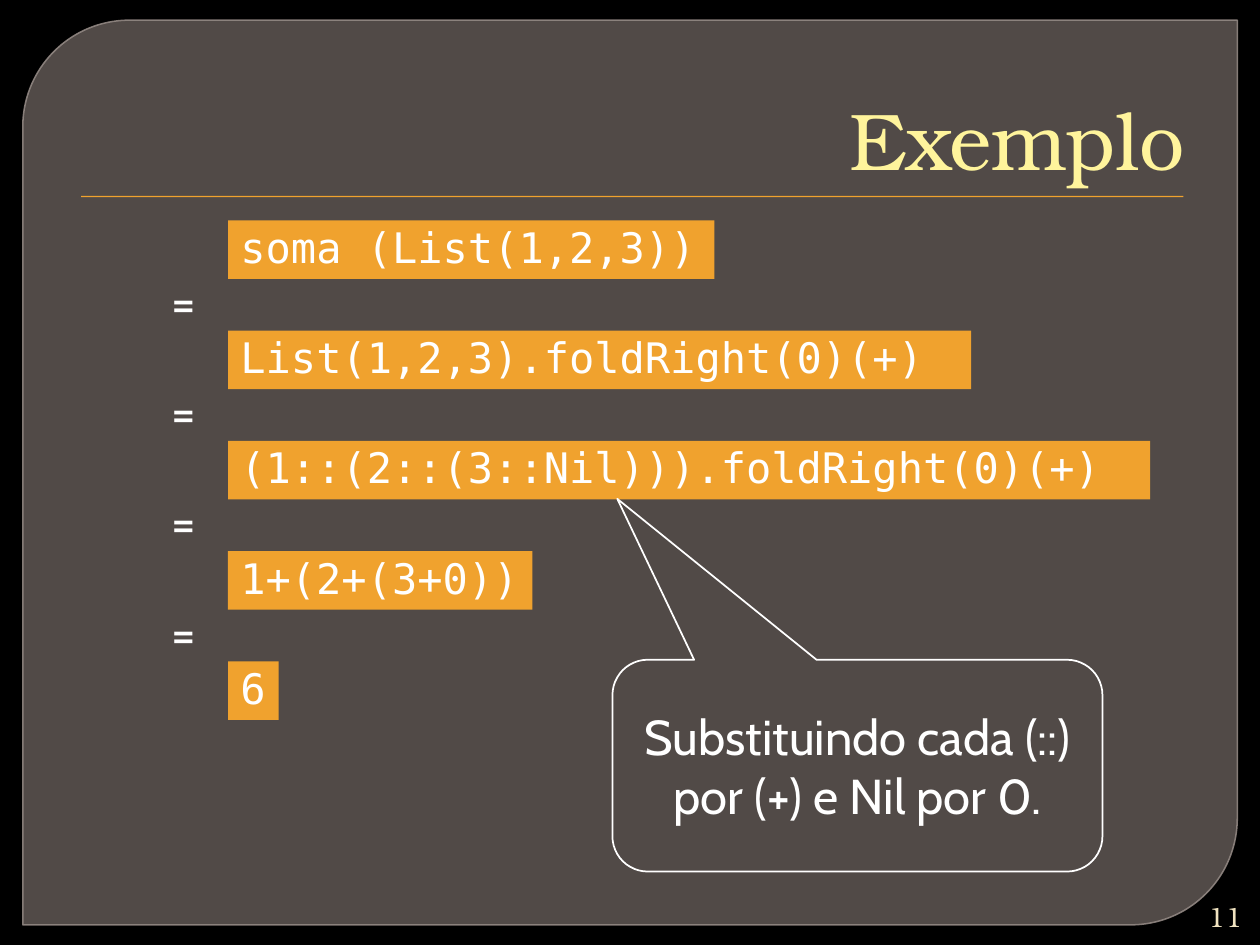
from dataclasses import dataclass

from lxml import etree
from pptx import Presentation
from pptx.dml.color import RGBColor
from pptx.enum.shapes import MSO_SHAPE
from pptx.enum.text import MSO_ANCHOR, MSO_AUTO_SIZE, PP_ALIGN
from pptx.oxml.ns import qn
from pptx.util import Pt

ROUND_PANEL = MSO_SHAPE.ROUND_2_DIAG_RECTANGLE
RECTANGLE = MSO_SHAPE.RECTANGLE
CALLOUT = MSO_SHAPE.ROUNDED_RECTANGULAR_CALLOUT
MIDDLE, BOTTOM = MSO_ANCHOR.MIDDLE, MSO_ANCHOR.BOTTOM
LEFT, CENTER, RIGHT = PP_ALIGN.LEFT, PP_ALIGN.CENTER, PP_ALIGN.RIGHT
NO_FIT = MSO_AUTO_SIZE.NONE


@dataclass
class Theme:
    background: str = "000000"
    panel: str = "7D726E"
    panel_line: str = "948A85"
    accent: str = "F0A22E"
    title: str = "FFF49C"
    number: str = "F0E3C0"
    text: str = "FFFFFF"
    serif: str = "TeX Gyre Bonum"
    sans: str = "Cabin"
    mono: str = "DejaVu Sans Mono"
    title_size: int = 46
    number_size: int = 16
    code_size: int = 24
    body_size: int = 28


theme = Theme()


def write(shape, text, font, size, color, align, anchor=MIDDLE, wrap=True):
    frame = shape.text_frame
    frame.text = text
    frame.word_wrap = wrap
    frame.auto_size = NO_FIT
    frame.vertical_anchor = anchor
    para = frame.paragraphs[0]
    para.alignment = align
    span = para.runs[0]
    span.font.name = font
    span.font.size = Pt(size)
    span.font.color.rgb = RGBColor.from_string(color)
    return para


def set_alpha(fill_parent, percent):
    color = fill_parent.find(qn("a:solidFill")).find(qn("a:srgbClr"))
    etree.SubElement(color, qn("a:alpha"), val=str(percent * 1000))


deck = Presentation()
deck.slide_width, deck.slide_height = Pt(720), Pt(540)
page = deck.slides.add_slide(deck.slide_layouts[5])
page.background.fill.solid()
page.background.fill.fore_color.rgb = RGBColor.from_string(theme.background)

panel = page.shapes.add_shape(ROUND_PANEL, Pt(13), Pt(11.5), Pt(694), Pt(517))
panel.adjustments[0] = 0.118
panel.adjustments[1] = 0
panel.shadow.inherit = False
panel.fill.solid()
panel.fill.fore_color.rgb = RGBColor.from_string(theme.panel)
panel.line.color.rgb = RGBColor.from_string(theme.panel_line)
panel.line.width = Pt(0.87)
set_alpha(panel.element.spPr, 65)
set_alpha(panel.element.spPr.find(qn("a:ln")), 88)

rule = page.shapes.add_shape(RECTANGLE, Pt(46.3), Pt(112), Pt(630), Pt(0.72))
rule.shadow.inherit = False
rule.fill.solid()
rule.fill.fore_color.rgb = RGBColor.from_string(theme.accent)
rule.line.fill.background()

title = page.shapes.title
title.left, title.top, title.width, title.height = Pt(36), Pt(20), Pt(648), Pt(90)
write(title, "Exemplo", theme.serif, theme.title_size, theme.title, RIGHT, BOTTOM)
title.element.getparent().append(title.element)

number = page.shapes.add_textbox(Pt(680.4), Pt(512.6), Pt(36.7), Pt(21.6))
write(number, "11", theme.serif, theme.number_size, theme.number, RIGHT, wrap=False)

steps = [
    ("soma (List(1,2,3))", 278),
    ("List(1,2,3).foldRight(0)(+)", 424.6),
    ("(1::(2::(3::Nil))).foldRight(0)(+)", 527),
    ("1+(2+(3+0))", 174),
    ("6", 29),
]
for index, (code, width) in enumerate(steps):
    top = 126 + 63 * index
    box = page.shapes.add_shape(RECTANGLE, Pt(130.3), Pt(top), Pt(width), Pt(33.4))
    box.shadow.inherit = False
    box.fill.solid()
    box.fill.fore_color.rgb = RGBColor.from_string(theme.accent)
    box.line.fill.background()
    para = write(box, code, theme.mono, theme.code_size, theme.text, LEFT)
    para.line_spacing = 0.9
    box.text_frame.margin_right = 0
    if index:
        sign = page.shapes.add_textbox(Pt(87.8), Pt(top - 37.6), Pt(34.6), Pt(41))
        write(sign, "=", theme.sans, theme.body_size, theme.text, CENTER, wrap=False)

callout = page.shapes.add_shape(CALLOUT, Pt(350), Pt(377), Pt(280), Pt(121))
for index, value in enumerate((-0.49, -1.26, 0.167)):
    callout.adjustments[index] = value
callout.shadow.inherit = False
callout.fill.background()
callout.line.color.rgb = RGBColor.from_string(theme.text)
callout.line.width = Pt(1)
write(callout, "Substituindo cada (::) por (+) e Nil por 0.",
      theme.sans, theme.body_size, theme.text, CENTER)

deck.save("out.pptx")
